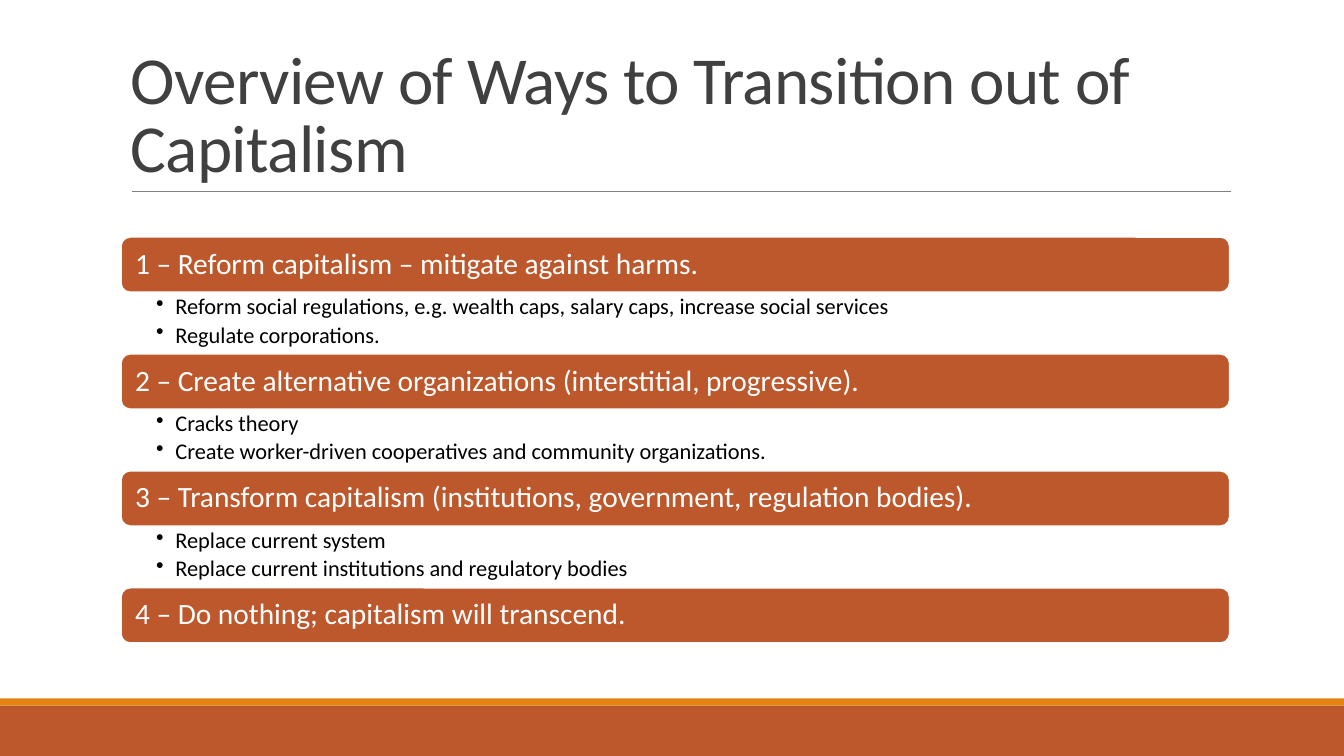
from lxml import etree
from pptx import Presentation
from pptx.dml.color import RGBColor
from pptx.enum.shapes import MSO_CONNECTOR, MSO_SHAPE
from pptx.enum.text import MSO_ANCHOR, PP_ALIGN
from pptx.oxml.ns import qn
from pptx.util import Inches, Pt

RECT, ROUND = MSO_SHAPE.RECTANGLE, MSO_SHAPE.ROUNDED_RECTANGLE
LINE = MSO_CONNECTOR.STRAIGHT
TOP, MIDDLE, BOTTOM = MSO_ANCHOR.TOP, MSO_ANCHOR.MIDDLE, MSO_ANCHOR.BOTTOM
LEFT = PP_ALIGN.LEFT


class Theme:
    """Colours, font and type sizes."""
    rust = RGBColor.from_string("BD582C")
    amber = RGBColor.from_string("E48312")
    gray = RGBColor.from_string("808080")
    dark = RGBColor.from_string("404040")
    white = RGBColor.from_string("FFFFFF")
    black = RGBColor.from_string("000000")
    face = "Calibri"
    title, head, body = Pt(48), Pt(21), Pt(16)


class Deck:
    """Draws on one slide; every length is in grid cells of 0.1 inch."""
    cell = 0.1
    wide, high = 133.33, 75

    def __init__(self, theme):
        self.theme = theme
        self.show = Presentation()
        self.show.slide_width = self.grid(self.wide)
        self.show.slide_height = self.grid(self.high)
        self.slide = self.show.slides.add_slide(self.show.slide_layouts[6])

    def grid(self, count):
        return Inches(count * self.cell)

    def place(self, *cells):
        return [self.grid(count) for count in cells]

    def style(self, item, form):
        for name, value in form.items():
            setattr(item, name, value)

    def frame(self, shape, anchor, pad):
        text = shape.text_frame
        left, top, right, bottom = self.place(*pad)
        self.style(text, {
            "word_wrap": True, "vertical_anchor": anchor,
            "margin_left": left, "margin_top": top,
            "margin_right": right, "margin_bottom": bottom})
        return text

    def label(self, para, words, size, color, space=0.9):
        self.style(para, {"alignment": LEFT, "line_spacing": space})
        run = para.add_run()
        run.text = words
        self.style(run.font, {"name": self.theme.face, "size": size})
        run.font.color.rgb = color
        return run

    def bar(self, kind, box, fill, edge=None):
        shape = self.slide.shapes.add_shape(kind, *self.place(*box))
        shape.shadow.inherit = False
        shape.fill.solid()
        shape.fill.fore_color.rgb = fill
        if edge is None:
            shape.line.fill.background()
        else:
            shape.line.color.rgb = edge
            shape.line.width = Pt(1.25)
        return shape

    def rule(self, left, right, top):
        line = self.slide.shapes.add_connector(
            LINE, *self.place(left, top, right, top))
        line.line.color.rgb = self.theme.gray
        line.line.width = Pt(0.5)
        etree.SubElement(line._element.spPr, qn("a:effectLst"))

    def title(self, box, words):
        shape = self.slide.shapes.add_textbox(*self.place(*box))
        text = self.frame(shape, BOTTOM, (1, 0.5, 1, 0.5))
        run = self.label(text.paragraphs[0], words,
                         self.theme.title, self.theme.dark, 0.85)
        run._r.get_or_add_rPr().set("spc", "-50")

    def head(self, box, words):
        shape = self.bar(ROUND, box, self.theme.rust, self.theme.white)
        text = self.frame(shape, MIDDLE, (1.13, 0.9, 1.13, 0.9))
        self.label(text.paragraphs[0], words,
                   self.theme.head, self.theme.white)

    def points(self, box, lines):
        shape = self.slide.shapes.add_textbox(*self.place(*box))
        text = self.frame(shape, TOP, (3.5, 0.3, 1.6, 0.3))
        for spot, words in enumerate(lines):
            para = text.add_paragraph() if spot else text.paragraphs[0]
            props = para._p.get_or_add_pPr()
            hang = self.grid(1.9)
            props.set("marL", str(hang))
            props.set("indent", str(-hang))
            etree.SubElement(props, qn("a:buChar"), char="•")
            self.style(para, {"level": 1, "space_after": Pt(3)})
            self.label(para, words, self.theme.body, self.theme.black)


WAYS = [
    ("1 – Reform capitalism – mitigate against harms.",
     ["Reform social regulations, e.g. wealth caps, salary caps, "
      "increase social services",
      "Regulate corporations."]),
    ("2 – Create alternative organizations (interstitial, progressive).",
     ["Cracks theory",
      "Create worker-driven cooperatives and community organizations."]),
    ("3 – Transform capitalism (institutions, government, "
     "regulation bodies).",
     ["Replace current system",
      "Replace current institutions and regulatory bodies"]),
    ("4 – Do nothing; capitalism will transcend.", []),
]


def main():
    deck = Deck(Theme)
    left, width = 12, 110

    # Footer bands
    deck.bar(RECT, (0, 70, deck.wide, 5), Theme.rust)
    deck.bar(RECT, (0, 69.3, deck.wide, 0.7), Theme.amber)

    # Title and its rule
    deck.rule(13.1, 122.1, 19)
    deck.title((left, 3.1, width, 15.9),
               "Overview of Ways to Transition out of Capitalism")

    # Ways out, each a bar with its points below
    first, tall, deep = 23.5, 5.5, 6.1
    for spot, (words, lines) in enumerate(WAYS):
        top = first + spot * (tall + deep)
        deck.head((left, top, width, tall), words)
        if lines:
            deck.points((left, top + tall, width, deep), lines)

    deck.show.save("out.pptx")


if __name__ == "__main__":
    main()
